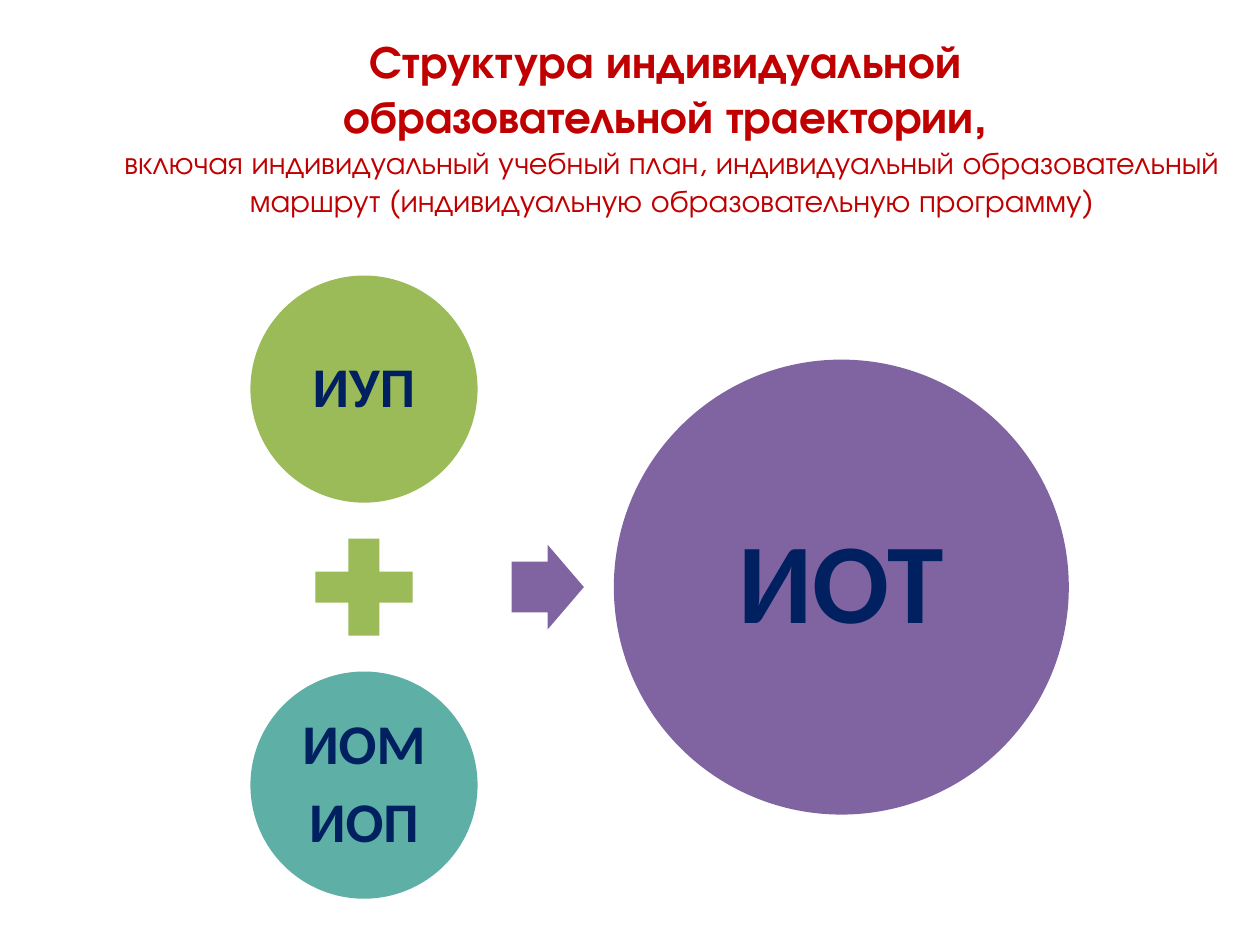
"""Build the slide showing how two plans combine into an educational trajectory."""
from dataclasses import dataclass

import pptx
import pptx.dml.color
import pptx.enum.shapes
import pptx.enum.text
import pptx.slide
import pptx.text.text
import pptx.util

Pt = pptx.util.Pt
RGB = pptx.dml.color.RGBColor
SHAPE = pptx.enum.shapes.MSO_SHAPE
CENTER = pptx.enum.text.PP_ALIGN.CENTER


@dataclass(frozen=True)
class Theme:
    """Colours, fonts and type sizes of the slide."""

    title: RGB = RGB(0xC0, 0x00, 0x00)
    label: RGB = RGB(0x00, 0x20, 0x60)
    green: RGB = RGB(0x9B, 0xBB, 0x59)
    teal: RGB = RGB(0x5E, 0xAF, 0xA6)
    purple: RGB = RGB(0x80, 0x64, 0xA2)
    title_font: str = "TeX Gyre Adventor"
    label_font: str = "Calibri"
    title_size: float = 26.1
    subtitle_size: float = 18
    part_size: float = 32
    whole_size: float = 65


@dataclass(frozen=True)
class Figure:
    """A filled shape placed by its centre, with optional label lines."""

    kind: SHAPE
    cx: float
    cy: float
    width: float
    height: float
    fill: RGB
    lines: tuple[str, ...] = ()
    size: float = 0
    inset: float = 0
    adjustments: tuple[float, ...] = ()


THEME = Theme()
PARTS_X, MIDDLE_Y = 208, 335.5
PART, PLUS, WHOLE, GAP = 129.8, 75.5, 260, 10.5
PART_OFFSET = PART / 2 + GAP + PLUS / 2

FIGURES = (
    Figure(SHAPE.OVAL, PARTS_X, MIDDLE_Y - PART_OFFSET, PART, PART, THEME.green,
           ("ИУП",), THEME.part_size, 3),
    Figure(SHAPE.MATH_PLUS, PARTS_X, MIDDLE_Y, PLUS, PLUS, THEME.green),
    Figure(SHAPE.OVAL, PARTS_X, MIDDLE_Y + PART_OFFSET, PART, PART, THEME.teal,
           ("ИОМ", "ИОП"), THEME.part_size, 3),
    Figure(SHAPE.RIGHT_ARROW, 313, MIDDLE_Y, 41.3, 48.3, THEME.purple,
           adjustments=(0.6, 0.5)),
    Figure(SHAPE.OVAL, 480.8, MIDDLE_Y, WHOLE, WHOLE, THEME.purple,
           ("ИОТ",), THEME.whole_size, 6.5),
)


def style_run(r: pptx.text.text._Run, font: str, size: float, color: RGB, bold: bool) -> None:
    """Give a run its font, size, colour and weight."""
    r.font.name = font
    r.font.size = Pt(size)
    r.font.bold = bold
    r.font.color.rgb = color


def draw_title(s: pptx.slide.Slide) -> None:
    """Draw the bold heading with its lighter continuation."""
    tf = s.shapes.add_textbox(Pt(48), Pt(15.5), Pt(672), Pt(130)).text_frame
    tf.word_wrap = True
    p = tf.paragraphs[0]
    p.text = (
        "Структура индивидуальной \vобразовательной траектории, \v"
        "включая индивидуальный учебный план, индивидуальный образовательный "
        "маршрут (индивидуальную образовательную программу)"
    )
    p.alignment = CENTER
    *heading, subtitle = p.runs
    for r in heading:
        style_run(r, THEME.title_font, THEME.title_size, THEME.title, True)
    style_run(subtitle, THEME.title_font, THEME.subtitle_size, THEME.title, False)


def draw_figure(s: pptx.slide.Slide, figure: Figure) -> None:
    """Draw one figure and its label."""
    sp = s.shapes.add_shape(
        figure.kind, Pt(figure.cx - figure.width / 2), Pt(figure.cy - figure.height / 2),
        Pt(figure.width), Pt(figure.height))
    sp.shadow.inherit = False
    sp.fill.solid()
    sp.fill.fore_color.rgb = figure.fill
    sp.line.fill.background()
    for i, value in enumerate(figure.adjustments):
        sp.adjustments[i] = value
    if not figure.lines:
        return
    tf = sp.text_frame
    tf.word_wrap = True
    tf.vertical_anchor = pptx.enum.text.MSO_ANCHOR.MIDDLE
    tf.margin_left = tf.margin_right = tf.margin_top = tf.margin_bottom = Pt(figure.inset)
    tf.text = "\n".join(figure.lines)
    for p in tf.paragraphs:
        p.alignment = CENTER
        p.line_spacing = 0.9
        p.space_after = Pt(10)
        for r in p.runs:
            style_run(r, THEME.label_font, figure.size, THEME.label, True)


def main() -> None:
    """Build and save the slide."""
    prs = pptx.Presentation()
    prs.slide_width, prs.slide_height = Pt(720), Pt(540)
    s = prs.slides.add_slide(prs.slide_layouts[6])
    draw_title(s)
    for figure in FIGURES:
        draw_figure(s, figure)
    prs.save("out.pptx")


if __name__ == "__main__":
    main()
